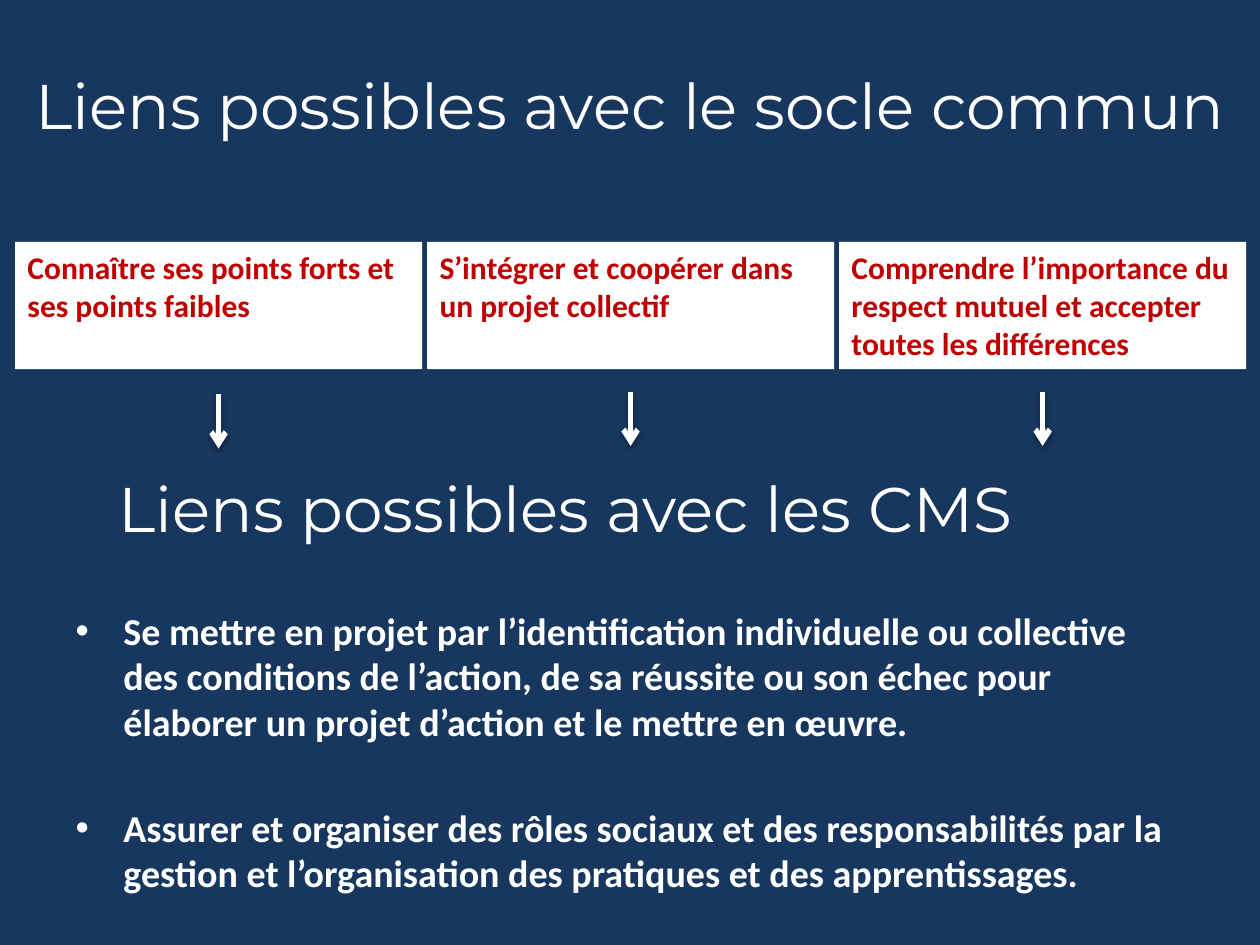
from dataclasses import dataclass

from lxml.etree import SubElement
from pptx import Presentation
from pptx.dml.color import RGBColor
from pptx.enum.shapes import MSO_CONNECTOR, MSO_SHAPE
from pptx.enum.text import MSO_ANCHOR as Anchor, MSO_AUTO_SIZE as AutoSize, PP_ALIGN as Align
from pptx.oxml import parse_xml
from pptx.oxml.ns import nsdecls, qn
from pptx.util import Emu, Inches, Pt

COLORS = {"night": "17375E", "white": "FFFFFF", "red": "C00000", "black": "000000"}
HEADING = {"font": "Montserrat", "size": 36, "color": "white"}

CARD_LEFT, CARD_TOP = 0.12, 1.92
CARD_WIDTH, CARD_HEIGHT = 3.23, 1.01
CARD_PITCH = 3.27
ARROW_LENGTH = 0.43


@dataclass
class Card:
    text: str
    arrow_top: float


CARDS = [
    Card("Connaître ses points forts et ses points faibles", 3.13),
    Card("S’intégrer et coopérer dans un projet collectif", 3.11),
    Card("Comprendre l’importance du respect mutuel et accepter toutes les différences", 3.11),
]

SKILLS = [
    "Se mettre en projet par l’identification individuelle ou collective des conditions "
    "de l’action, de sa réussite ou son échec pour élaborer un projet d’action et le "
    "mettre en œuvre.",
    "Assurer et organiser des rôles sociaux et des responsabilités par la gestion et "
    "l’organisation des pratiques et des apprentissages.",
]


def rgb(name: str) -> RGBColor:
    return RGBColor.from_string(COLORS[name])


def place(box, left: float, top: float, width: float, height: float) -> None:
    box.left, box.top = Inches(left), Inches(top)
    box.width, box.height = Inches(width), Inches(height)


def write(para, text: str, *, font: str, size: float, color: str,
          bold: bool = False, align=Align.LEFT, before: float = 0) -> None:
    para.alignment = align
    para.space_before = Pt(before)
    span = para.add_run()
    span.text = text
    span.font.name = font
    span.font.size = Pt(size)
    span.font.bold = bold
    span.font.color.rgb = rgb(color)


def add_bullet(para) -> None:
    props = para._p.get_or_add_pPr()
    props.set("marL", str(Inches(0.38)))
    props.set("indent", str(Inches(-0.38)))
    SubElement(props, qn("a:buChar")).set("char", "•")


def add_card(page, card: Card, left: float) -> None:
    box = page.shapes.add_shape(MSO_SHAPE.RECTANGLE, Inches(left), Inches(CARD_TOP),
                                Inches(CARD_WIDTH), Inches(CARD_HEIGHT))
    box.shadow.inherit = False
    box.fill.solid()
    box.fill.fore_color.rgb = rgb("white")
    box.line.fill.background()
    frame = box.text_frame
    frame.word_wrap = True
    frame.vertical_anchor = Anchor.TOP
    frame.auto_size = AutoSize.SHAPE_TO_FIT_TEXT
    write(frame.paragraphs[0], card.text, font="Calibri", size=18, color="red", bold=True)


def add_arrow(page, x: float, top: float) -> None:
    arrow = page.shapes.add_connector(MSO_CONNECTOR.STRAIGHT, Inches(x), Inches(top),
                                      Inches(x), Inches(top + ARROW_LENGTH))
    arrow.line.color.rgb = rgb("white")
    arrow.line.width = Pt(3)
    SubElement(arrow.line._get_or_add_ln(), qn("a:tailEnd")).set("type", "arrow")
    # Soft shadow falling straight down
    arrow._element.spPr.append(parse_xml(
        f'<a:effectLst {nsdecls("a")}><a:outerShdw blurRad="{Pt(3.1)}" dist="{Pt(1.8)}" '
        f'dir="5400000" rotWithShape="0"><a:srgbClr val="{COLORS["black"]}">'
        '<a:alpha val="35000"/></a:srgbClr></a:outerShdw></a:effectLst>'))


def main() -> None:
    deck = Presentation()
    deck.slide_width, deck.slide_height = Inches(10), Inches(7.5)
    page = deck.slides.add_slide(deck.slide_layouts[1])
    page.background.fill.solid()
    page.background.fill.fore_color.rgb = rgb("night")

    # Title
    title = page.shapes.title
    place(title, 0, 0.17, 10, 1.31)
    title.text_frame.vertical_anchor = Anchor.MIDDLE
    title.text_frame.auto_size = AutoSize.NONE
    write(title.text_frame.paragraphs[0], "Liens possibles avec le socle commun",
          align=Align.CENTER, **HEADING)

    # Cards, each with an arrow below its centre
    for index, card in enumerate(CARDS):
        left = CARD_LEFT + index * CARD_PITCH
        add_card(page, card, left)
        add_arrow(page, left + CARD_WIDTH / 2, card.arrow_top)

    # Second heading
    heading = page.shapes.add_textbox(Inches(0.84), Inches(3.68), Inches(8.31), Inches(0.71))
    heading.text_frame.word_wrap = False
    heading.text_frame.auto_size = AutoSize.SHAPE_TO_FIT_TEXT
    write(heading.text_frame.paragraphs[0], "Liens possibles avec les CMS", **HEADING)

    # Skills list
    body = page.placeholders[1]
    place(body, 0.5, 4.77, 9, 2.28)
    frame = body.text_frame
    frame.auto_size = AutoSize.NONE
    for index, skill in enumerate(SKILLS):
        para = frame.add_paragraph() if index else frame.paragraphs[0]
        add_bullet(para)
        write(para, skill, font="Calibri", size=21.7, color="white", bold=True,
              before=34.3 if index else 0)

    deck.save("out.pptx")


if __name__ == "__main__":
    main()
